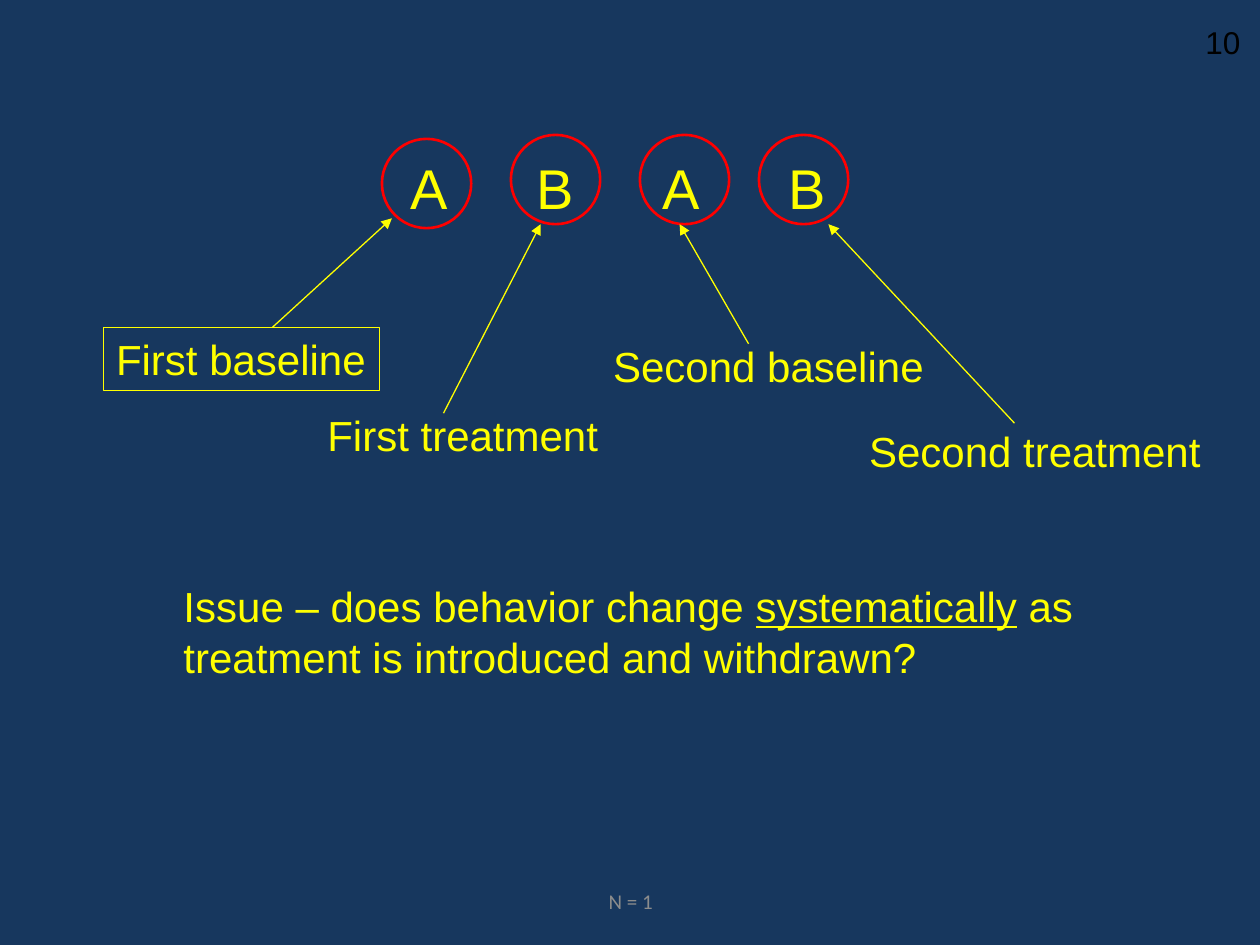
"""Build the slide that explains the ABAB reversal design."""
from lxml.etree import SubElement
from pptx import Presentation
from pptx.dml.color import RGBColor
from pptx.enum.shapes import MSO_CONNECTOR, MSO_SHAPE
from pptx.enum.text import MSO_ANCHOR, PP_ALIGN
from pptx.oxml.ns import qn
from pptx.util import Cm, Pt

COLORS = {
    "background": "17375E",
    "text": "FFFF00",
    "circle": "FF0000",
    "number": "000000",
    "footer": "8C8C8C",
}
CIRCLE_SIZE = 1.8
LETTER_STEP = 2.54

presentation = Presentation()
presentation.slide_width = Cm(25.4)
presentation.slide_height = Cm(19.05)
slide = presentation.slides.add_slide(presentation.slide_layouts[6])
slide.background.fill.solid()
slide.background.fill.fore_color.rgb = RGBColor.from_string(COLORS["background"])


def add_text(box, parts, size, color="text", font="Arial", wrap=False):
    textbox = slide.shapes.add_textbox(*[Cm(length) for length in box])
    textbox.text_frame.word_wrap = wrap
    paragraph = textbox.text_frame.paragraphs[0]
    for part in parts:
        run = paragraph.add_run()
        run.text = part
        run.font.name = font
        run.font.size = Pt(size)
        run.font.color.rgb = RGBColor.from_string(COLORS[color])
    return textbox


def set_line(line, color, width):
    line.color.rgb = RGBColor.from_string(COLORS[color])
    line.width = Pt(width)


add_text((24.05, 0.33, 1.3, 1.02), ["10"], 18, "number")

footer = add_text((8.69, 17.65, 8.05, 1.02), ["N = 1"], 12, "footer", "Calibri", True)
footer.text_frame.vertical_anchor = MSO_ANCHOR.MIDDLE
footer.text_frame.paragraphs[0].alignment = PP_ALIGN.CENTER

letters = add_text((8.03, 2.97, 8.89, 1.6), ["A\tB\tA\tB"], 32)
letter_properties = letters.text_frame.paragraphs[0]._p.get_or_add_pPr()
letter_properties.set("defTabSz", str(Cm(LETTER_STEP)))
tab_list = SubElement(letter_properties, qn("a:tabLst"))
for step in range(1, 4):
    SubElement(tab_list, qn("a:tab"), pos=str(Cm(step * LETTER_STEP)), algn="l")

phases = [
    ("First baseline", (2.09, 6.6, 5.56, 1.27), (7.7, 2.8), (5.49, 6.6), (7.9, 4.4)),
    ("First treatment", (6.35, 8.13, 5.97, 1.27), (10.3, 2.72), (8.94, 8.33), (10.9, 4.52)),
    ("Second baseline", (12.11, 6.74, 6.78, 1.27), (12.9, 2.72), (15.09, 6.93), (13.7, 4.52)),
    ("Second treatment", (17.27, 8.46, 7.19, 1.27), (15.3, 2.72), (20.45, 8.53), (16.7, 4.52)),
]
for name, label_box, circle_corner, arrow_start, arrow_end in phases:
    left, top = circle_corner
    circle = slide.shapes.add_shape(
        MSO_SHAPE.OVAL, Cm(left), Cm(top), Cm(CIRCLE_SIZE), Cm(CIRCLE_SIZE)
    )
    circle.shadow.inherit = False
    circle.fill.background()
    set_line(circle.line, "circle", 1.5)

    label = add_text(label_box, [name], 24)
    if name == "First baseline":
        set_line(label.line, "text", 0.75)

    arrow = slide.shapes.add_connector(
        MSO_CONNECTOR.STRAIGHT, *[Cm(length) for length in arrow_start + arrow_end]
    )
    set_line(arrow.line, "text", 0.75)
    SubElement(arrow.line._get_or_add_ln(), qn("a:tailEnd"), type="triangle")
    SubElement(arrow._element.spPr, qn("a:effectLst"))

issue_parts = [
    "Issue – does behavior change ",
    "systematically",
    " as treatment is introduced and withdrawn?",
]
issue = add_text((3.45, 11.58, 19.05, 3.33), issue_parts, 24, wrap=True)
issue.text_frame.paragraphs[0].runs[1].font.underline = True

presentation.save("out.pptx")
